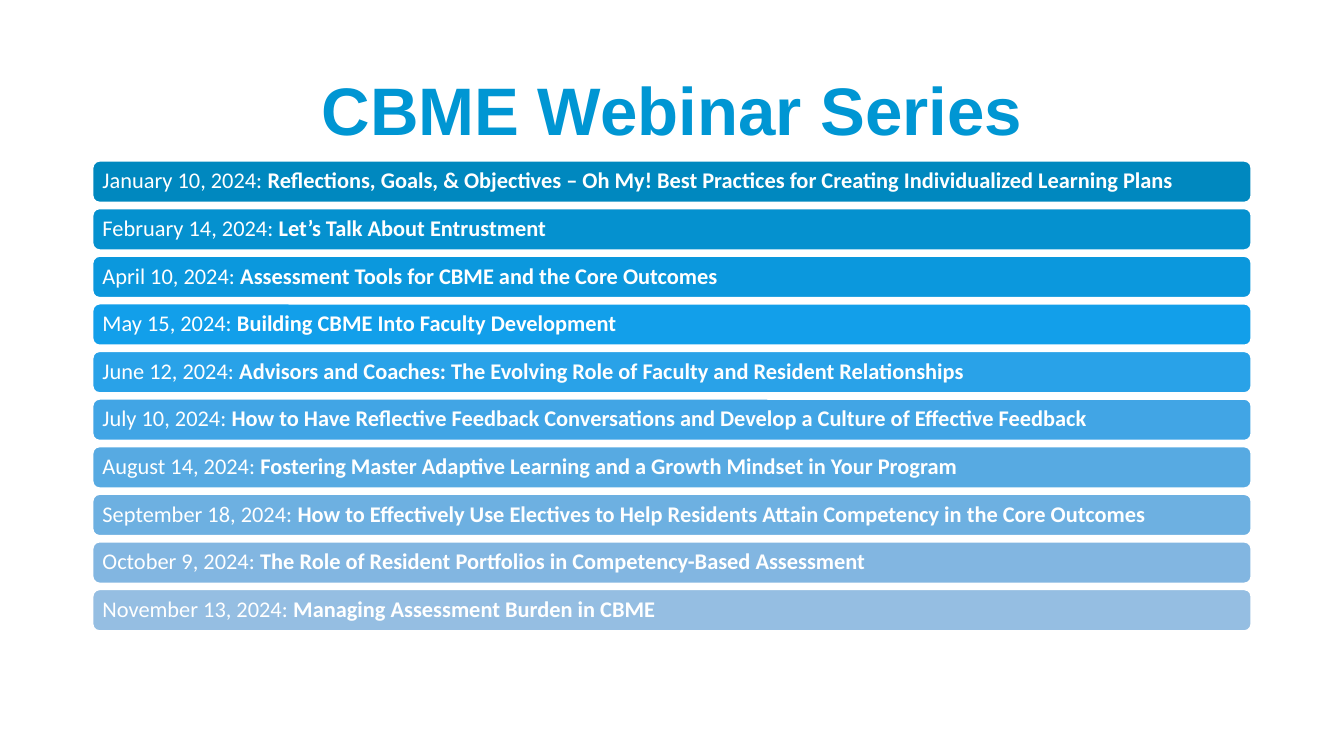
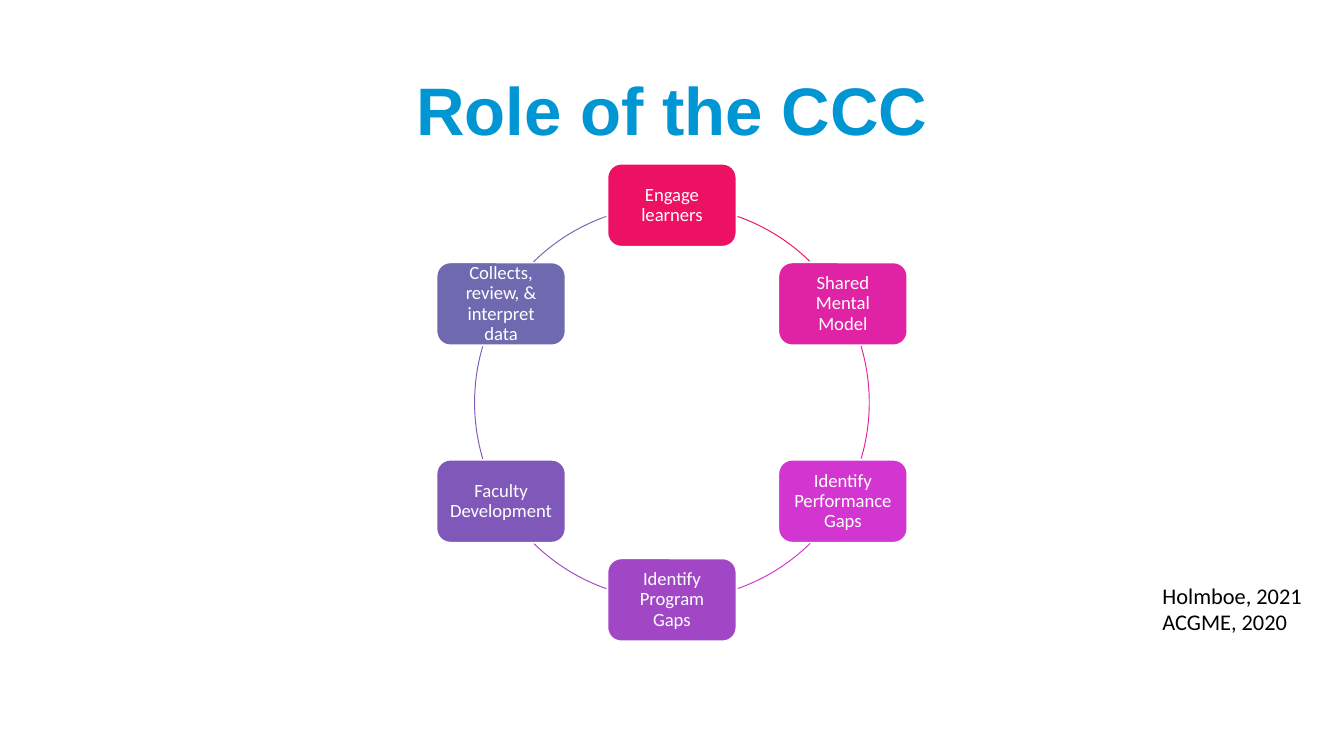
import math

import pptx
import pptx.dml.color
import pptx.enum.shapes
import pptx.enum.text
import pptx.util

Cm = pptx.util.Cm
Pt = pptx.util.Pt
RGBColor = pptx.dml.color.RGBColor
SHAPE = pptx.enum.shapes.MSO_SHAPE
ALIGN = pptx.enum.text.PP_ALIGN
ANCHOR = pptx.enum.text.MSO_ANCHOR

# Shared colours and text formats
TITLE_BLUE = RGBColor(0x00, 0x96, 0xD3)
WHITE = RGBColor(0xFF, 0xFF, 0xFF)
BLACK = RGBColor(0x00, 0x00, 0x00)
TITLE_FONT = {"name": "Arial", "size": Pt(36), "bold": True}
BODY_FONT = {"name": "Calibri", "size": Pt(12), "bold": False}
TOPIC_FONT = {**BODY_FONT, "bold": True}
STEP_FONT = {**BODY_FONT, "size": Pt(10)}
TIGHT = 0.9

# Webinar bars (cm)
BAR_LEFT, BAR_TOP, BAR_WIDTH, BAR_HEIGHT, BAR_PITCH = 1.75, 3.04, 21.9, 0.79, 0.9
WEBINARS = [
    ("January 10, 2024: ", "Reflections, Goals, & Objectives – Oh My! "
     "Best Practices for Creating Individualized Learning Plans", RGBColor(0x00, 0x88, 0xBF)),
    ("February 14, 2024: ", "Let’s Talk About Entrustment", RGBColor(0x05, 0x91, 0xCF)),
    ("April 10, 2024: ", "Assessment Tools for CBME and the Core Outcomes",
     RGBColor(0x0B, 0x98, 0xDD)),
    ("May 15, 2024: ", "Building CBME Into Faculty Development", RGBColor(0x12, 0x9F, 0xEA)),
    ("June 12, 2024: ", "Advisors and Coaches: The Evolving Role of Faculty "
     "and Resident Relationships", RGBColor(0x29, 0xA2, 0xE8)),
    ("July 10, 2024: ", "How to Have Reflective Feedback Conversations "
     "and Develop a Culture of Effective Feedback", RGBColor(0x41, 0xA5, 0xE5)),
    ("August 14, 2024: ", "Fostering Master Adaptive Learning "
     "and a Growth Mindset in Your Program", RGBColor(0x57, 0xAA, 0xE2)),
    ("September 18, 2024: ", "How to Effectively Use Electives to Help Residents "
     "Attain Competency in the Core Outcomes", RGBColor(0x6D, 0xB0, 0xE1)),
    ("October 9, 2024: ", "The Role of Resident Portfolios in Competency-Based Assessment",
     RGBColor(0x82, 0xB6, 0xE1)),
    ("November 13, 2024: ", "Managing Assessment Burden in CBME", RGBColor(0x95, 0xBE, 0xE2)),
]

# Cycle of steps, clockwise from the top (cm, degrees)
CENTER_X, CENTER_Y, RADIUS = 12.7, 7.61, 3.73
STEP_WIDTH, STEP_HEIGHT = 2.44, 1.57
HALF_CYCLE_ARCS = [(289.4, 314.5), (343.4, 16.6), (45.5, 70.6)]
STEPS = [
    ("Engage learners", RGBColor(0xED, 0x11, 0x63)),
    ("Shared Mental Model", RGBColor(0xE0, 0x23, 0xA4)),
    ("Identify Performance Gaps", RGBColor(0xD3, 0x35, 0xD1)),
    ("Identify Program Gaps", RGBColor(0xA1, 0x47, 0xC6)),
    ("Faculty Development", RGBColor(0x7F, 0x58, 0xBA)),
    ("Collects, review, & interpret data", RGBColor(0x6F, 0x69, 0xAF)),
]
CITATIONS = ["Holmboe, 2021", "ACGME, 2020"]


def apply(target, values):
    for name, value in values.items():
        setattr(target, name, value)


def add_run(paragraph, text, font, color):
    run = paragraph.add_run()
    run.text = text
    apply(run.font, font)
    run.font.color.rgb = color


def add_titled_slide(prs, title_text):
    slide = prs.slides.add_slide(prs.slide_layouts[5])
    title = slide.shapes.title
    apply(title, {"left": Cm(1.75), "top": Cm(0.76), "width": Cm(21.9), "height": Cm(2.77)})
    title.text_frame.vertical_anchor = ANCHOR.MIDDLE
    heading = title.text_frame.paragraphs[0]
    apply(heading, {"alignment": ALIGN.CENTER, "line_spacing": TIGHT})
    add_run(heading, title_text, TITLE_FONT, TITLE_BLUE)
    return slide


def add_card(slide, left, top, width, height, fill, inset, alignment):
    """Add a white-edged rounded card and return its paragraph."""
    card = slide.shapes.add_shape(SHAPE.ROUNDED_RECTANGLE,
                                  Cm(left), Cm(top), Cm(width), Cm(height))
    card.shadow.inherit = False
    card.fill.solid()
    card.fill.fore_color.rgb = fill
    card.line.color.rgb = WHITE
    card.line.width = Pt(1)
    margins = {f"margin_{side}": Cm(inset) for side in ("left", "top", "right", "bottom")}
    apply(card.text_frame, {"word_wrap": True, "vertical_anchor": ANCHOR.MIDDLE, **margins})
    label = card.text_frame.paragraphs[0]
    apply(label, {"alignment": alignment, "line_spacing": TIGHT})
    return label


def add_cycle_arc(slide, start, end, color):
    arc = slide.shapes.add_shape(SHAPE.ARC, Cm(CENTER_X - RADIUS), Cm(CENTER_Y - RADIUS),
                                 Cm(2 * RADIUS), Cm(2 * RADIUS))
    arc.shadow.inherit = False
    # One degree is 60000 angle units; adjustments count in 100000
    for index, angle in enumerate((start, end)):
        arc.adjustments[index] = angle * 0.6
    arc.fill.background()
    arc.line.color.rgb = color
    arc.line.width = Pt(0.5)


def add_citations(slide, citations):
    box = slide.shapes.add_textbox(Cm(21.72), Cm(10.87), Cm(3.2), Cm(1.27))
    frame = box.text_frame
    apply(frame, {"word_wrap": False,
                  "auto_size": pptx.enum.text.MSO_AUTO_SIZE.SHAPE_TO_FIT_TEXT})
    for index, citation in enumerate(citations):
        line = frame.add_paragraph() if index else frame.paragraphs[0]
        add_run(line, citation, BODY_FONT, BLACK)


def build_webinar_slide(prs):
    slide = add_titled_slide(prs, "CBME Webinar Series")
    for row, (date, topic, color) in enumerate(WEBINARS):
        label = add_card(slide, BAR_LEFT, BAR_TOP + row * BAR_PITCH, BAR_WIDTH, BAR_HEIGHT,
                         color, 0.15, ALIGN.LEFT)
        add_run(label, date, BODY_FONT, WHITE)
        add_run(label, topic, TOPIC_FONT, WHITE)


def build_role_slide(prs):
    slide = add_titled_slide(prs, "Role of the CCC")
    arcs = HALF_CYCLE_ARCS + [((start + 180) % 360, (end + 180) % 360)
                              for start, end in HALF_CYCLE_ARCS]
    for index, ((step, color), (start, end)) in enumerate(zip(STEPS, arcs)):
        angle = math.radians(index * 360 / len(STEPS) - 90)
        left = CENTER_X + RADIUS * math.cos(angle) - STEP_WIDTH / 2
        top = CENTER_Y + RADIUS * math.sin(angle) - STEP_HEIGHT / 2
        label = add_card(slide, left, top, STEP_WIDTH, STEP_HEIGHT, color, 0.17, ALIGN.CENTER)
        add_run(label, step, STEP_FONT, WHITE)
        add_cycle_arc(slide, start, end, color)
    add_citations(slide, CITATIONS)


def main():
    prs = pptx.Presentation()
    apply(prs, {"slide_width": Cm(25.4), "slide_height": Cm(14.29)})
    build_webinar_slide(prs)
    build_role_slide(prs)
    prs.save("out.pptx")


if __name__ == "__main__":
    main()
